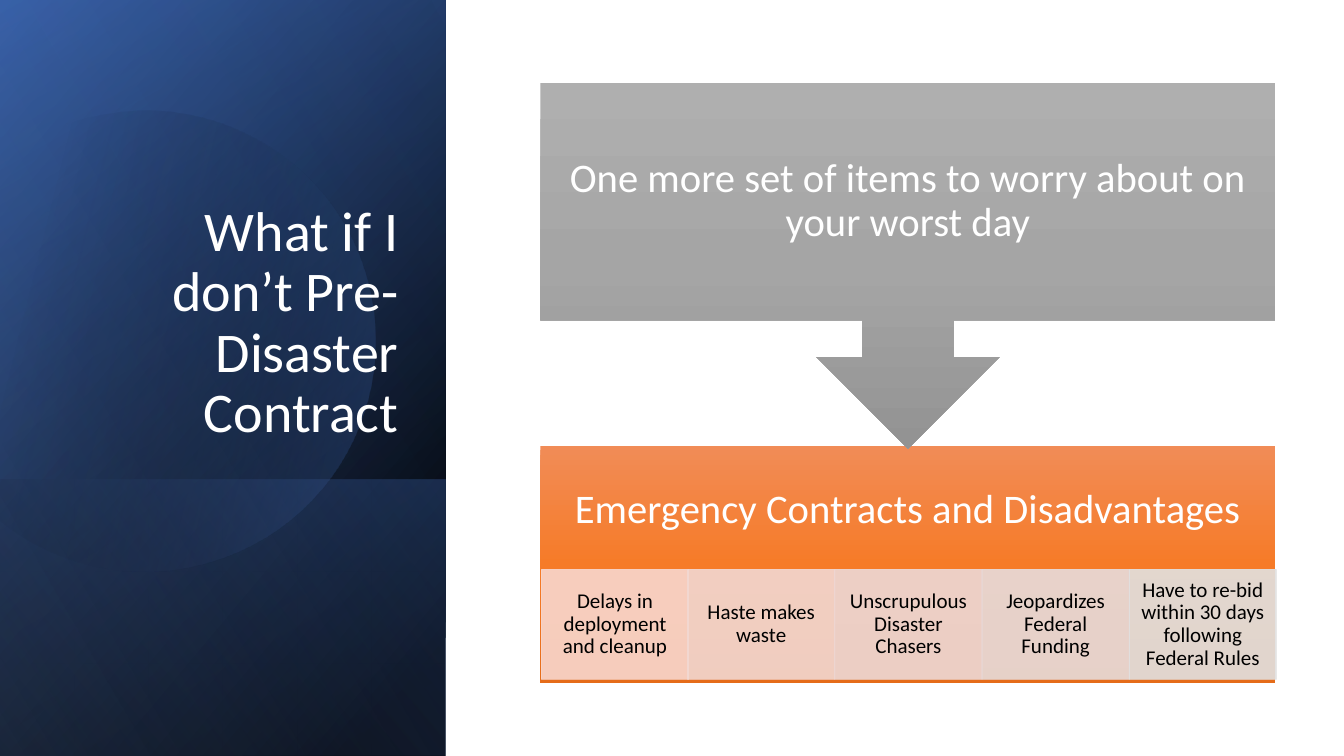
import math

import pptx
import pptx.dml.color
import pptx.enum.shapes
import pptx.enum.text
import pptx.oxml.ns
import pptx.util
from lxml import etree

RGBColor = pptx.dml.color.RGBColor
Shape = pptx.enum.shapes.MSO_SHAPE
Align = pptx.enum.text.PP_ALIGN
Anchor = pptx.enum.text.MSO_ANCHOR
qn = pptx.oxml.ns.qn

EMU_PER_PX = 9144  # 100 px to the inch

BLACK = RGBColor(0x00, 0x00, 0x00)
WHITE = RGBColor(0xFF, 0xFF, 0xFF)
NAVY = RGBColor(0x2F, 0x55, 0x97)
BLUE = RGBColor(0x44, 0x72, 0xC4)
PALE_BLUE = RGBColor(0x8F, 0xAA, 0xDC)
ORANGES = [RGBColor(0xF1, 0x8C, 0x57), RGBColor(0xF6, 0x7B, 0x28), RGBColor(0xE5, 0x6C, 0x19)]
GREYS = [RGBColor(0xAF, 0xAF, 0xAF), RGBColor(0xA5, 0xA5, 0xA5), RGBColor(0x93, 0x93, 0x93)]

DISADVANTAGES = [
    ("Delays in deployment and cleanup", RGBColor(0xF8, 0xD7, 0xCE)),
    ("Haste makes waste", RGBColor(0xF2, 0xD8, 0xD2)),
    ("Unscrupulous Disaster Chasers", RGBColor(0xED, 0xD9, 0xD7)),
    ("Jeopardizes Federal Funding", RGBColor(0xE7, 0xDC, 0xDC)),
    ("Have to re-bid within 30 days following Federal Rules", RGBColor(0xE1, 0xE1, 0xE1)),
]

SIDE_PANEL = (-154, 154, 750, 442)
CIRCLE_CENTER = (158.5, 334.5)
CIRCLE_ROTATION = 343.9
CIRCLE_START = (149, 110)
# Each segment is a line (one point) or a cubic curve (three points).
CIRCLE_SEGMENTS = [
    [(246, 112), (335, 177), (363, 275)],
    [(398, 397), (328, 523), (207, 558)],
    [(131, 580), (53, 561), (-3, 514)],
    [(-15, 503)],
    [(-15, 175)],
    [(0, 161)],
    [(23, 142), (50, 128), (80, 119)],
    [(103, 113), (126, 110), (149, 110)],
]


def px(length):
    return pptx.util.Emu(round(length * EMU_PER_PX))


def set_alpha(color_element, percent):
    etree.SubElement(color_element, qn("a:alpha"), val=str(percent * 1000))


def outline_points(start, segments, steps=24):
    """Flatten lines and cubic curves into a list of points."""
    points = [start]
    for segment in segments:
        if len(segment) == 1:
            points += segment
            continue
        controls = [points[-1], *segment]
        for step in range(1, steps + 1):
            t = step / steps
            weights = [math.comb(3, k) * t**k * (1 - t) ** (3 - k) for k in range(4)]
            points.append(tuple(sum(w * c[axis] for w, c in zip(weights, controls)) for axis in (0, 1)))
    return points


def rotate(point, center, degrees):
    angle = math.radians(degrees)
    x, y = point[0] - center[0], point[1] - center[1]
    return (
        center[0] + x * math.cos(angle) - y * math.sin(angle),
        center[1] + x * math.sin(angle) + y * math.cos(angle),
    )


class SlideBuilder:
    font = "Calibri"

    def __init__(self, deck):
        self.slide = deck.slides.add_slide(deck.slide_layouts[6])

    def shape(self, kind, bounds, rotation=0, flip=False):
        shape = self.slide.shapes.add_shape(kind, *map(px, bounds))
        shape.rotation = rotation
        if flip:
            shape.element.spPr.xfrm.set("flipH", "1")
        shape.shadow.inherit = False
        shape.line.fill.background()
        return shape

    def outline(self, points, center, rotation):
        """Draw a closed shape whose points are given as seen after rotation."""
        upright = [tuple(map(px, rotate(point, center, -rotation))) for point in points]
        builder = self.slide.shapes.build_freeform(*upright[0], scale=1.0)
        builder.add_line_segments(upright[1:], close=True)
        shape = builder.convert_to_shape()
        shape.rotation = rotation
        shape.shadow.inherit = False
        shape.line.fill.background()
        return shape

    def gradient(self, shape, stops, angle, turns_with_shape=True):
        """Fill with stops of (position %, colour, opacity %)."""
        shape.fill.gradient()
        gradient = shape.element.spPr.find(qn("a:gradFill"))
        for child in list(gradient):
            gradient.remove(child)
        gradient.set("rotWithShape", str(int(turns_with_shape)))
        stop_list = etree.SubElement(gradient, qn("a:gsLst"))
        for position, color, opacity in stops:
            stop = etree.SubElement(stop_list, qn("a:gs"), pos=str(position * 1000))
            color_element = etree.SubElement(stop, qn("a:srgbClr"), val=str(color))
            if opacity < 100:
                set_alpha(color_element, opacity)
        etree.SubElement(gradient, qn("a:lin"), ang=str(angle * 60000), scaled="0")

    def cell(self, bounds, color):
        cell = self.shape(Shape.RECTANGLE, bounds)
        cell.fill.solid()
        cell.fill.fore_color.rgb = color
        cell.line.color.rgb = color
        cell.line.width = pptx.util.Pt(0.5)
        for color_element in list(cell.element.spPr.iter(qn("a:srgbClr"))):
            set_alpha(color_element, 90)
        return cell

    def text_box(self, bounds, text, **style):
        box = self.slide.shapes.add_textbox(*map(px, bounds))
        self.set_text(box, text, **style)

    def set_text(self, box, text, size, color=WHITE, align=Align.CENTER,
                 anchor=Anchor.MIDDLE, insets=(23, 23, 23, 23)):
        """Put text in a box; insets are left, top, right, bottom."""
        frame = box.text_frame
        frame.word_wrap = True
        frame.vertical_anchor = anchor
        (frame.margin_left, frame.margin_top,
         frame.margin_right, frame.margin_bottom) = map(px, insets)
        para = frame.paragraphs[0]
        para.alignment = align
        para.line_spacing = 0.9
        span = para.add_run()
        span.text = text
        span.font.name = self.font
        span.font.size = pptx.util.Pt(size)
        span.font.color.rgb = color


def draw_side_panel(page):
    def layer(bounds, stops, angle):
        page.gradient(page.shape(Shape.RECTANGLE, bounds, 90, flip=True), stops, angle)

    layer(SIDE_PANEL, [(8, BLACK, 100), (100, NAVY, 100)], 50)
    layer(SIDE_PANEL, [(0, BLACK, 0), (99, BLUE, 46)], 30)
    layer((84, 392, 274, 442), [(2, BLUE, 29), (100, BLACK, 30)], 130)
    points = outline_points(CIRCLE_START, CIRCLE_SEGMENTS)
    circle = page.outline(points, CIRCLE_CENTER, CIRCLE_ROTATION)
    page.gradient(circle, [(29, BLACK, 0), (100, BLUE, 43)], 30)
    layer(SIDE_PANEL, [(0, BLACK, 0), (99, PALE_BLUE, 11)], 120)
    page.text_box((64, 184, 341, 262), "What if I don’t Pre-Disaster Contract", size=40,
                  align=Align.RIGHT, anchor=Anchor.BOTTOM, insets=(30, 5, 10, 5))


def draw_process(page):
    def three_tones(shape, colors):
        stops = [(50 * i, color, 100) for i, color in enumerate(colors)]
        page.gradient(shape, stops, 90, turns_with_shape=False)

    left, width = 536, 729
    three_tones(page.shape(Shape.RECTANGLE, (left, 442, width, 236)), ORANGES)
    page.text_box((left, 442, width, 128), "Emergency Contracts and Disadvantages", size=29)
    for i, (text, color) in enumerate(DISADVANTAGES):
        offset = width * i // len(DISADVANTAGES)
        cell = page.cell((left + 1 + offset, 565, 146, 109), color)
        page.set_text(cell, text, size=15, color=BLACK, insets=(12, 2, 12, 2))
    three_tones(page.shape(Shape.UP_ARROW_CALLOUT, (left, 82, width, 363), 180), GREYS)
    page.text_box((left, 82, width, 236),
                  "One more set of items to worry about on your worst day", size=29)


def main():
    deck = pptx.Presentation()
    deck.slide_width, deck.slide_height = px(1333), px(750)
    page = SlideBuilder(deck)
    draw_side_panel(page)
    draw_process(page)
    deck.save("out.pptx")


if __name__ == "__main__":
    main()
